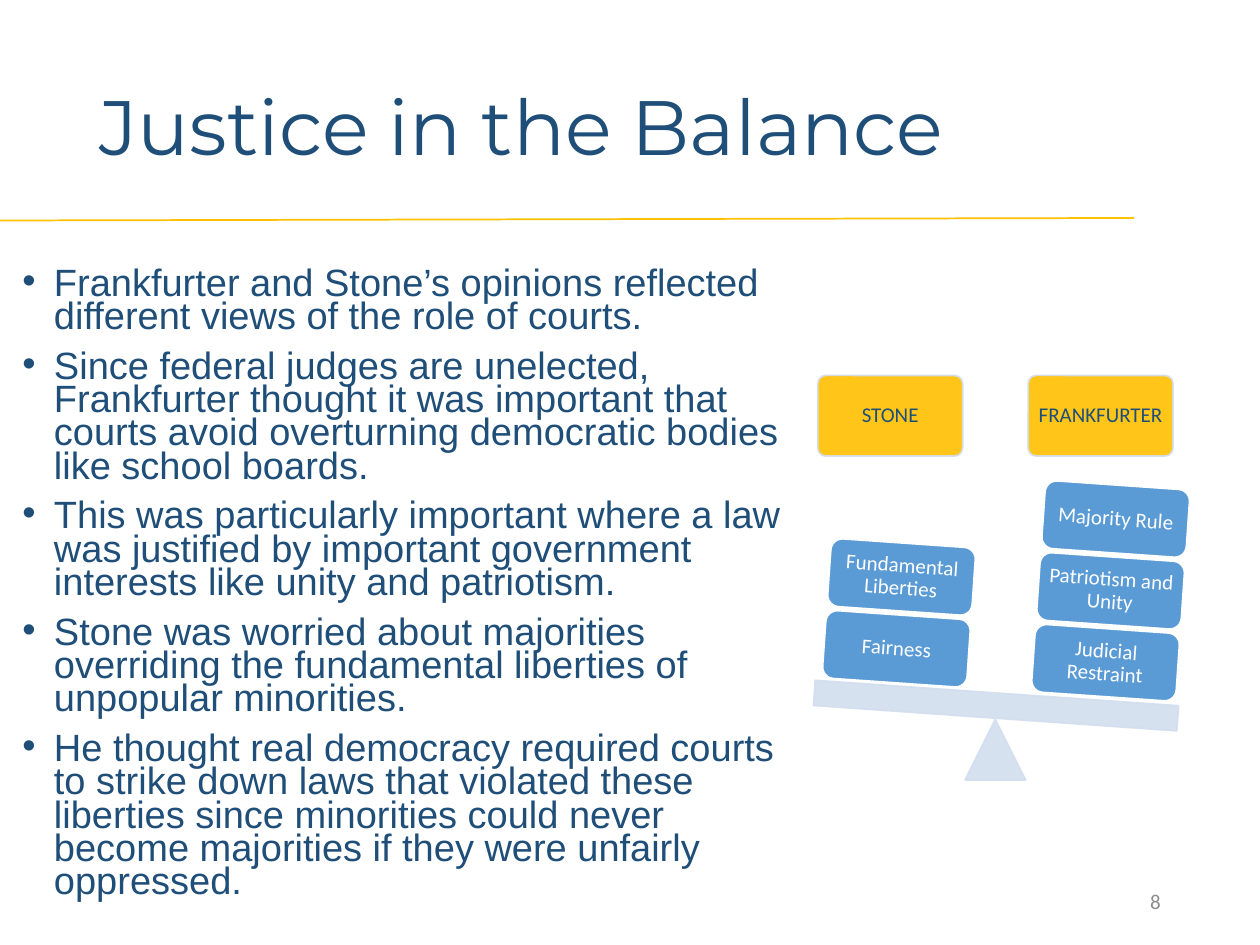
from dataclasses import dataclass

from lxml import etree
from pptx import Presentation
from pptx.dml.color import RGBColor
from pptx.enum.shapes import MSO_CONNECTOR, MSO_SHAPE
from pptx.enum.text import MSO_ANCHOR, PP_ALIGN
from pptx.oxml.ns import qn
from pptx.util import Inches, Pt

ROUND, RECT, TRIANGLE = MSO_SHAPE.ROUNDED_RECTANGLE, MSO_SHAPE.RECTANGLE, MSO_SHAPE.ISOSCELES_TRIANGLE
STRAIGHT = MSO_CONNECTOR.STRAIGHT
TOP, MIDDLE = MSO_ANCHOR.TOP, MSO_ANCHOR.MIDDLE
LEFT, CENTER, RIGHT = PP_ALIGN.LEFT, PP_ALIGN.CENTER, PP_ALIGN.RIGHT


@dataclass(frozen=True)
class Theme:
    """Colours, fonts and type sizes of the slide."""
    navy: str = "1F4E79"
    gold: str = "FFC000"
    blue: str = "5B9BD5"
    pale: str = "D2DEEF"
    white: str = "FFFFFF"
    grey: str = "8C8C8C"
    heading: str = "Montserrat"
    body: str = "Arial"
    label: str = "Calibri"
    title_size: float = 44
    body_size: float = 21.7
    label_size: float = 12


T = Theme()
WIDTH, HEIGHT = 10, 7.5
TILT = 4
BLOCK_W, BLOCK_H = 1.15, 0.54
STEP_X, STEP_Y = 0.04, 0.57
HEADERS = [(6.49, "STONE"), (8.16, "FRANKFURTER")]
STACKS = [
    (6.54, 4.88, ["Fairness", "Fundamental Liberties"]),
    (8.2, 4.99, ["Judicial Restraint", "Patriotism and Unity", "Majority Rule"]),
]
POINTS = [
    "Frankfurter and Stone’s opinions reflected different views of the role of courts.",
    "Since federal judges are unelected, Frankfurter thought it was important that courts "
    "avoid overturning democratic bodies like school boards.",
    "This was particularly important where a law was justified by important government "
    "interests like unity and patriotism.",
    "Stone was worried about majorities overriding the fundamental liberties of unpopular minorities.",
    "He thought real democracy required courts to strike down laws that violated these liberties "
    "since minorities could never become majorities if they were unfairly oppressed.",
]


def add_bullet(p, indent):
    """Give a paragraph a hanging round bullet."""
    pPr = p._p.get_or_add_pPr()
    pPr.set("marL", str(Inches(indent)))
    pPr.set("indent", str(-Inches(indent)))
    etree.SubElement(pPr, qn("a:buFont")).set("typeface", T.body)
    etree.SubElement(pPr, qn("a:buChar")).set("char", "•")


def write(s, paragraphs, *, size, color, font, align=LEFT, anchor=TOP, spacing=1.0,
          gap=0, bullet=0, inset=None):
    """Fill a shape with formatted paragraphs."""
    tf = s.text_frame
    tf.word_wrap = True
    tf.vertical_anchor = anchor
    if inset is not None:
        tf.margin_left = tf.margin_right = tf.margin_top = tf.margin_bottom = Inches(inset)
    for i, text in enumerate(paragraphs):
        p = tf.paragraphs[0] if i == 0 else tf.add_paragraph()
        p.alignment = align
        p.line_spacing = spacing
        p.space_before = Pt(gap if i else 0)
        if bullet:
            add_bullet(p, bullet)
        r = p.add_run()
        r.text = text
        r.font.size, r.font.name = Pt(size), font
        r.font.color.rgb = RGBColor.from_string(color)


def add_text(slide, box, paragraphs, **style):
    """Add a text box."""
    s = slide.shapes.add_textbox(*map(Inches, box))
    write(s, paragraphs, **style)


def set_alpha(fill, percent):
    """Make a solid fill partly transparent."""
    clr = fill._xPr.find(qn("a:solidFill"))[0]
    etree.SubElement(clr, qn("a:alpha")).set("val", str(percent * 1000))


def add_figure(slide, kind, box, fill, line, *, tilt=0, alpha=100):
    """Add a filled and outlined preset shape."""
    s = slide.shapes.add_shape(kind, *map(Inches, box))
    s.shadow.inherit = False
    s.rotation = tilt
    if kind == ROUND:
        s.adjustments[0] = 0.1 if not tilt else 0.17
    s.fill.solid()
    s.fill.fore_color.rgb = RGBColor.from_string(fill)
    s.line.color.rgb = RGBColor.from_string(line)
    s.line.width = Pt(1)
    if alpha < 100:
        set_alpha(s.fill, alpha)
        set_alpha(s.line.fill, alpha)
    return s


def add_label(slide, box, text, fill, line, color, **look):
    """Add a rounded box with a centred label."""
    s = add_figure(slide, ROUND, box, fill, line, **look)
    write(s, [text], size=T.label_size, color=color, font=T.label, align=CENTER,
          anchor=MIDDLE, spacing=0.9, inset=0.05)


def add_rule(slide, start, end):
    """Add the gold line under the title."""
    s = slide.shapes.add_connector(STRAIGHT, *map(Inches, start + end))
    s.line.color.rgb = RGBColor.from_string(T.gold)
    s.line.width = Pt(1)
    etree.SubElement(s._element.spPr, qn("a:effectLst"))


def add_balance(slide):
    """Draw the tilted scale with its headers and stacked blocks."""
    for left, name in HEADERS:
        add_label(slide, (left, 2.98, BLOCK_W, 0.64), name, T.gold, T.pale, T.navy, alpha=90)
    add_figure(slide, TRIANGLE, (7.66, 5.71, 0.48, 0.48), T.pale, T.pale, alpha=90)
    add_figure(slide, RECT, (6.46, 5.5, 2.89, 0.2), T.pale, T.pale, tilt=TILT, alpha=90)
    for left, top, names in STACKS:
        for i, name in enumerate(names):
            box = (left + i * STEP_X, top - i * STEP_Y, BLOCK_W, BLOCK_H)
            add_label(slide, box, name, T.blue, T.white, T.white, tilt=TILT)


def main():
    """Build and save the slide."""
    prs = Presentation()
    prs.slide_width, prs.slide_height = Inches(WIDTH), Inches(HEIGHT)
    slide = prs.slides.add_slide(prs.slide_layouts[6])
    add_rule(slide, (0, 1.75), (0.9 * WIDTH, 1.73))
    add_text(slide, (0.08, 2.09, 6.25, 5.26), POINTS, size=T.body_size, color=T.navy,
             font=T.body, spacing=0.73, gap=9.4, bullet=0.25)
    add_text(slide, (0.69, 0.31, 8.62, 1.45), ["Justice in the Balance"], size=T.title_size,
             color=T.navy, font=T.heading, anchor=MIDDLE, spacing=0.9)
    add_text(slide, (7.06, 6.95, 2.25, 0.4), ["8"], size=T.label_size, color=T.grey,
             font=T.label, align=RIGHT, anchor=MIDDLE)
    add_balance(slide)
    prs.save("out.pptx")


if __name__ == "__main__":
    main()
